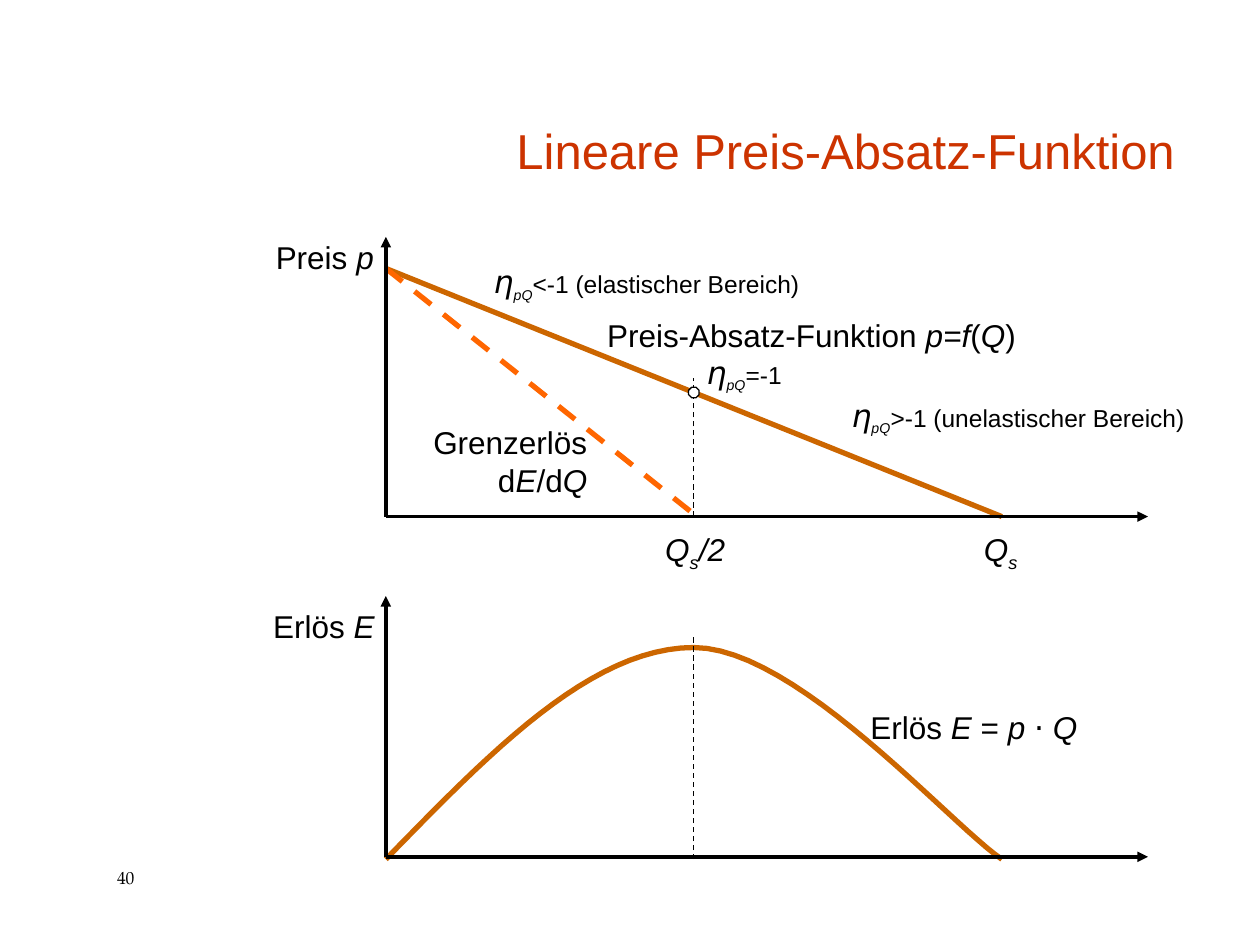
"""Build the slide on the linear price-demand function and its revenue curve."""
from dataclasses import dataclass
from typing import NamedTuple

from pptx import Presentation, util as u
from pptx.dml.color import RGBColor
from pptx.enum import dml, shapes, text
from pptx.oxml import ns, xmlchemy

BLACK = RGBColor(0x00, 0x00, 0x00)
WHITE = RGBColor(0xFF, 0xFF, 0xFF)
RED = RGBColor(0xCC, 0x33, 0x00)
BROWN = RGBColor(0xCC, 0x66, 0x00)
ORANGE = RGBColor(0xFF, 0x66, 0x00)

ORIGIN_X, SATURATION_X, AXIS_END = 220.5, 572.5, 656
HALF_X = (ORIGIN_X + SATURATION_X) / 2
PRICE_BASE, PRICE_TOP = 295.2, 153.4
REVENUE_BASE, REVENUE_FOOT, REVENUE_TOP = 489.6, 491, 370
MIDPOINT_Y = (PRICE_BASE + PRICE_TOP) / 2
CURVE_STEPS = 24

Point = tuple[float, float]


class Span(NamedTuple):
    words: str
    italic: bool = False
    size: float = 18
    name: str = "Arial"
    baseline: int = 0


@dataclass(frozen=True)
class Label:
    left: float
    top: float
    width: float
    height: float
    spans: tuple[Span, ...]
    align: text.PP_ALIGN = text.PP_ALIGN.LEFT
    spacing: float = 1.0
    anchor: text.MSO_ANCHOR = text.MSO_ANCHOR.TOP
    fit: text.MSO_AUTO_SIZE = text.MSO_AUTO_SIZE.SHAPE_TO_FIT_TEXT
    color: RGBColor = BLACK


@dataclass(frozen=True)
class Stroke:
    start: Point
    end: Point
    color: RGBColor = BLACK
    width: float = 2
    dashed: bool = False
    arrow: bool = False


def elasticity(relation: str) -> tuple[Span, ...]:
    """Return the spans of an elasticity statement."""
    return (Span("η", True, name="DejaVu Sans"),
            Span("pQ", True, 14, baseline=-25000), Span(relation, size=14))


def quantity(suffix: str = "") -> tuple[Span, ...]:
    """Return the spans of the saturation quantity."""
    spans = (Span("Q", True), Span("s", True, baseline=-25000))
    return spans + ((Span(suffix, True),) if suffix else ())


STROKES = (
    Stroke((ORIGIN_X, PRICE_TOP), (SATURATION_X, PRICE_BASE), BROWN, 3),
    Stroke((ORIGIN_X, PRICE_TOP), (HALF_X, 293.8), ORANGE, 3, dashed=True),
    Stroke((HALF_X, PRICE_BASE), (HALF_X, 216), width=0.75, dashed=True),
    Stroke((HALF_X, 491), (HALF_X, 364.3), width=0.75, dashed=True),
    Stroke((ORIGIN_X, PRICE_BASE), (ORIGIN_X, 135.4), arrow=True),
    Stroke((ORIGIN_X, PRICE_BASE), (AXIS_END, PRICE_BASE), arrow=True),
    Stroke((ORIGIN_X, REVENUE_BASE), (ORIGIN_X, 340.6), arrow=True),
    Stroke((ORIGIN_X, REVENUE_BASE), (AXIS_END, REVENUE_BASE), arrow=True),
)

REVENUE_ARCS = (
    ((ORIGIN_X, REVENUE_FOOT), (279.4, 430.6), (337.7, REVENUE_TOP), (HALF_X, REVENUE_TOP)),
    ((HALF_X, REVENUE_TOP), (455, REVENUE_TOP), (542.9, 470.9), (SATURATION_X, REVENUE_FOOT)),
)

LABELS = (
    Label(150.5, 30.2, 527.8, 75.6, (Span("Lineare Preis-Absatz-Funktion", size=28),),
          text.PP_ALIGN.RIGHT, anchor=text.MSO_ANCHOR.BOTTOM,
          fit=text.MSO_AUTO_SIZE.NONE, color=RED),
    Label(59.8, 491.8, 48.2, 20.9, (Span("40", size=10, name="TeX Gyre Pagella"),)),
    Label(150.5, 132.5, 82, 28.8, (Span("Preis "), Span("p", True))),
    Label(149, 343.4, 77, 28.8, (Span("Erlös "), Span("E", True))),
    Label(490.3, 401, 193.7, 28.8,
          (Span("Erlös "), Span("E", True), Span(" = "), Span("p ⋅ Q", True))),
    Label(339.8, 177.1, 329.8, 28.8,
          (Span("Preis-Absatz-Funktion "), Span("p=f", True), Span("("),
           Span("Q", True), Span(")"))),
    Label(221, 238.3, 121.7, 50.4,
          (Span("Grenzerlös"), Span("\n"), Span("d"), Span("E", True),
           Span("/d"), Span("Q", True)), text.PP_ALIGN.RIGHT),
    Label(373, 289.4, 82, 41.8, quantity("/2"), spacing=1.4),
    Label(555.1, 289.4, 46.8, 41.8, quantity(), spacing=1.4),
    Label(275, 141.8, 270, 34.6, elasticity("<-1 (elastischer Bereich)"), spacing=1.2),
    Label(396.7, 193.7, 96.5, 34.6, elasticity("=-1"), spacing=1.2),
    Label(479.5, 222.5, 210.2, 30.2, elasticity(">-1 (unelastischer Bereich)")),
)


def draw_label(page, label: Label) -> None:
    """Add a text box holding one paragraph of formatted spans."""
    box = page.shapes.add_textbox(
        *map(u.Pt, (label.left, label.top, label.width, label.height)))
    frame = box.text_frame
    frame_format = {"word_wrap": True, "auto_size": label.fit,
                    "vertical_anchor": label.anchor}
    for key, value in frame_format.items():
        setattr(frame, key, value)
    para = frame.paragraphs[0]
    para_format = {"alignment": label.align, "line_spacing": label.spacing}
    for key, value in para_format.items():
        setattr(para, key, value)
    for span in label.spans:
        if span.words == "\n":
            para.add_line_break()
            continue
        run = para.add_run()
        run.text = span.words
        font_format = {"size": u.Pt(span.size), "italic": span.italic, "name": span.name}
        for key, value in font_format.items():
            setattr(run.font, key, value)
        run.font.color.rgb = label.color
        if span.baseline:
            run._r.get_or_add_rPr().set("baseline", str(span.baseline))


def draw_stroke(page, stroke: Stroke) -> None:
    """Add a straight line, dashed or with an arrowhead where asked."""
    line = page.shapes.add_connector(
        shapes.MSO_CONNECTOR.STRAIGHT, *map(u.Pt, stroke.start + stroke.end))
    line.line.color.rgb = stroke.color
    line.line.width = u.Pt(stroke.width)
    if stroke.dashed:
        line.line.dash_style = dml.MSO_LINE.DASH
    properties = line._element.spPr
    if stroke.arrow:
        head = xmlchemy.OxmlElement("a:tailEnd")
        head.set("type", "triangle")
        properties.find(ns.qn("a:ln")).append(head)
    properties.append(xmlchemy.OxmlElement("a:effectLst"))


def bezier(arc: tuple[Point, ...], step: float) -> Point:
    """Return the point of a cubic arc at a share of its run."""
    rest = 1 - step
    weights = (rest ** 3, 3 * rest ** 2 * step, 3 * rest * step ** 2, step ** 3)
    x, y = (sum(w * p[axis] for w, p in zip(weights, arc)) for axis in (0, 1))
    return x, y


def draw_revenue(page) -> None:
    """Add the revenue curve as an open outline."""
    points = [bezier(arc, step / CURVE_STEPS)
              for arc in REVENUE_ARCS for step in range(1, CURVE_STEPS + 1)]
    builder = page.shapes.build_freeform(*map(u.Pt, REVENUE_ARCS[0][0]))
    builder.add_line_segments([(u.Pt(x), u.Pt(y)) for x, y in points], close=False)
    curve = builder.convert_to_shape()
    curve.shadow.inherit = False
    curve.fill.background()
    curve.line.color.rgb = BROWN
    curve.line.width = u.Pt(3)


def draw_marker(page, center: Point, size: float) -> None:
    """Add the white marker at the point of unit elasticity."""
    left, top = (value - size / 2 for value in center)
    marker = page.shapes.add_shape(
        shapes.MSO_SHAPE.OCTAGON, *map(u.Pt, (left, top, size, size)))
    marker.shadow.inherit = False
    marker.fill.solid()
    marker.fill.fore_color.rgb = WHITE
    marker.line.color.rgb = BLACK
    marker.line.width = u.Pt(0.75)


def main() -> None:
    """Compose and save the deck."""
    deck = Presentation()
    deck.slide_width, deck.slide_height = u.Pt(720), u.Pt(540)
    page = deck.slides.add_slide(deck.slide_layouts[6])
    draw_revenue(page)
    for stroke in STROKES:
        draw_stroke(page, stroke)
    for label in LABELS:
        draw_label(page, label)
    draw_marker(page, (HALF_X, MIDPOINT_Y), 6)
    deck.save("out.pptx")


if __name__ == "__main__":
    main()
